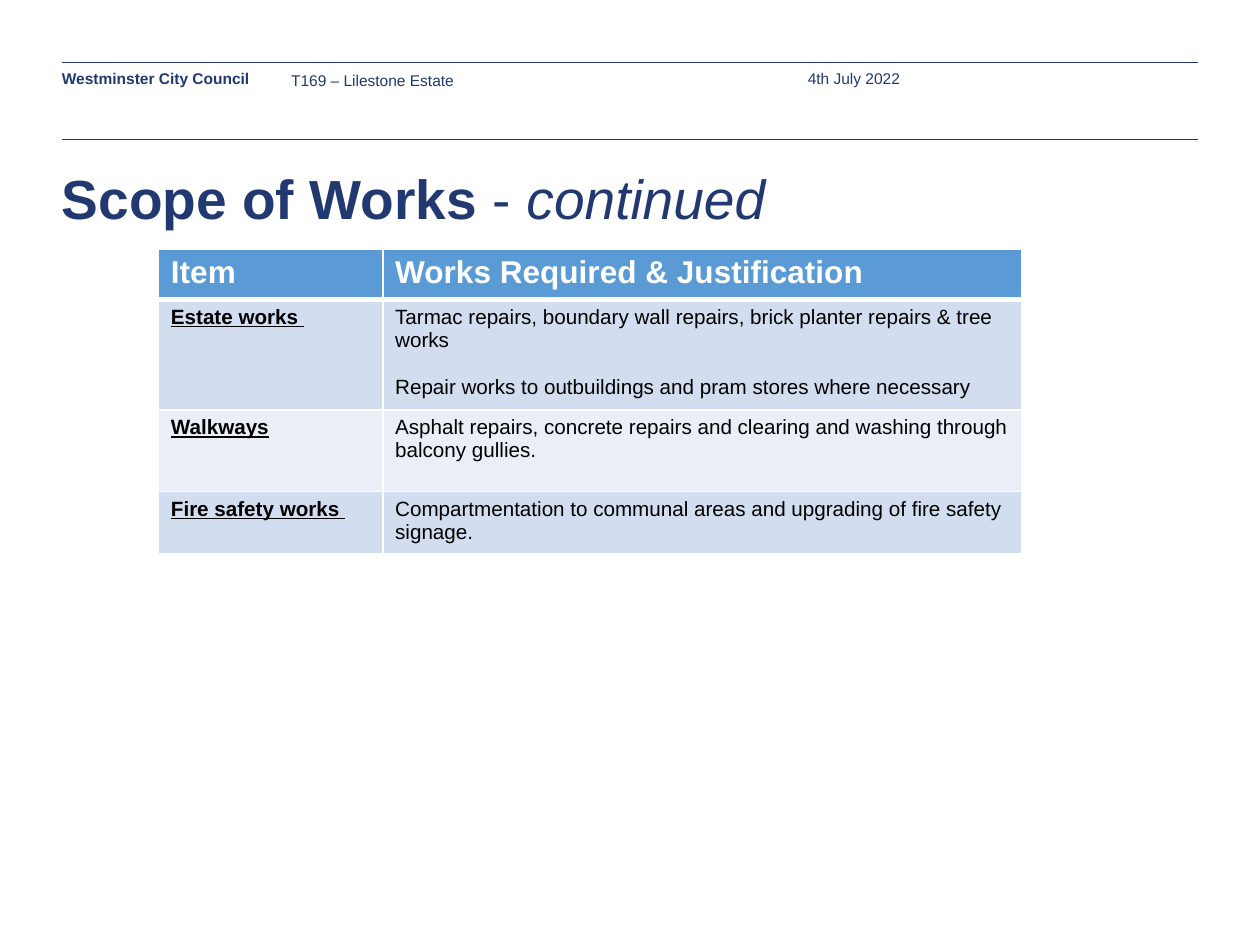
from dataclasses import dataclass

from lxml import etree
from pptx import Presentation
from pptx.dml.color import RGBColor
from pptx.enum.shapes import MSO_CONNECTOR
from pptx.enum.text import MSO_ANCHOR
from pptx.oxml.ns import qn
from pptx.util import Inches, Pt

STRAIGHT = MSO_CONNECTOR.STRAIGHT
TOP, MIDDLE = MSO_ANCHOR.TOP, MSO_ANCHOR.MIDDLE


@dataclass(frozen=True)
class Theme:
    font: str = "Arial"
    navy: str = "213970"
    white: str = "FFFFFF"
    black: str = "000000"
    header_fill: str = "5B9BD5"
    band_fills: tuple = ("D2DEEF", "EAEFF7")
    title_size: float = 32
    heading_size: float = 18.3
    body_size: float = 12
    running_size: float = 9
    paragraph_gap: float = 13.8
    rule_width: float = 0.25
    border_width: float = 1
    header_border_width: float = 3


class SlideBuilder:
    def __init__(self, slide, theme):
        self.slide = slide
        self.theme = theme

    def style(self, font, size, color, bold=False, italic=False, underline=False):
        font.name, font.size = self.theme.font, Pt(size)
        font.color.rgb = RGBColor.from_string(color)
        font.bold, font.italic, font.underline = bold, italic, underline

    def rule(self, left, right, y):
        line = self.slide.shapes.add_connector(
            STRAIGHT, Inches(left), Inches(y), Inches(right), Inches(y))
        line.line.color.rgb = RGBColor.from_string(self.theme.navy)
        line.line.width = Pt(self.theme.rule_width)
        etree.SubElement(line._element.spPr, qn("a:effectLst"))

    def text(self, place, pieces, size, anchor=TOP, wrap=True, line_spacing=None):
        """Add one paragraph; pieces are (wording, bold, italic)."""
        frame = self.slide.shapes.add_textbox(*map(Inches, place)).text_frame
        frame.margin_left = frame.margin_right = 0
        frame.margin_top = frame.margin_bottom = 0
        frame.word_wrap, frame.vertical_anchor = wrap, anchor
        paragraph = frame.paragraphs[0]
        if line_spacing:
            paragraph.line_spacing = Pt(line_spacing)
        for wording, bold, italic in pieces:
            run = paragraph.add_run()
            run.text = wording
            self.style(run.font, size, self.theme.navy, bold, italic)

    def borders(self, cell, top, bottom):
        """Draw white cell borders; they must precede the fill in tcPr."""
        properties = cell._tc.get_or_add_tcPr()
        side = self.theme.border_width
        widths = {"lnL": side, "lnR": side, "lnT": top, "lnB": bottom}
        for tag, width in widths.items():
            border = etree.SubElement(properties, qn(f"a:{tag}"), w=str(Pt(width)))
            fill = etree.SubElement(border, qn("a:solidFill"))
            etree.SubElement(fill, qn("a:srgbClr"), val=self.theme.white)

    def cell(self, cell, wording, row, column):
        theme = self.theme
        thin, thick = theme.border_width, theme.header_border_width
        header = row == 0
        self.borders(cell, thick if row == 1 else thin, thick if header else thin)
        fill = theme.header_fill if header else theme.band_fills[(row - 1) % 2]
        cell.fill.solid()
        cell.fill.fore_color.rgb = RGBColor.from_string(fill)
        cell.text_frame.text = wording
        for index, paragraph in enumerate(cell.text_frame.paragraphs):
            if index:
                paragraph.space_before = Pt(theme.paragraph_gap)
            for run in paragraph.runs:
                self.style(run.font,
                           theme.heading_size if header else theme.body_size,
                           theme.white if header else theme.black,
                           bold=header or column == 0,
                           underline=not header and column == 0)

    def table(self, left, top, widths, heights, rows):
        table = self.slide.shapes.add_table(
            len(rows), len(widths), Inches(left), Inches(top),
            Inches(sum(widths)), Inches(sum(heights))).table
        for column, width in zip(table.columns, widths):
            column.width = Inches(width)
        for row, height in zip(table.rows, heights):
            row.height = Inches(height)
        for r, row in enumerate(rows):
            for c, wording in enumerate(row):
                self.cell(table.cell(r, c), wording, r, c)


SCOPE = [
    ("Item", "Works Required & Justification"),
    ("Estate works ",
     "Tarmac repairs, boundary wall repairs, brick planter repairs & tree works\n"
     "Repair works to outbuildings and pram stores where necessary"),
    ("Walkways",
     "Asphalt repairs, concrete repairs and clearing and washing through "
     "balcony gullies."),
    ("Fire safety works ",
     "Compartmentation to communal areas and upgrading of fire safety signage."),
]


def main():
    deck = Presentation()
    deck.slide_width, deck.slide_height = Inches(10.17), Inches(7.66)
    theme = Theme()
    page = SlideBuilder(deck.slides.add_slide(deck.slide_layouts[6]), theme)

    small = theme.running_size
    page.text((0.5, 0.56, 1.53, 0.15), [("Westminster City Council", True, False)],
              small, wrap=False)
    for y in (0.5, 1.12):
        page.rule(0.5, 9.67, y)
    page.text((0.5, 1.33, 9.17, 0.82),
              [("Scope of Works ", True, False), ("- ", False, False),
               ("continued", False, True)], theme.title_size)
    page.text((6.52, 0.56, 2.29, 0.15), [("4th July 2022", False, False)],
              small, anchor=MIDDLE)
    page.text((2.35, 0.56, 3.57, 0.41), [("T169 – Lilestone Estate", False, False)],
              small, line_spacing=12)
    page.table(1.28, 2.01, (1.81, 5.16), (0.38, 0.85, 0.66, 0.47), SCOPE)
    deck.save("out.pptx")


if __name__ == "__main__":
    main()
